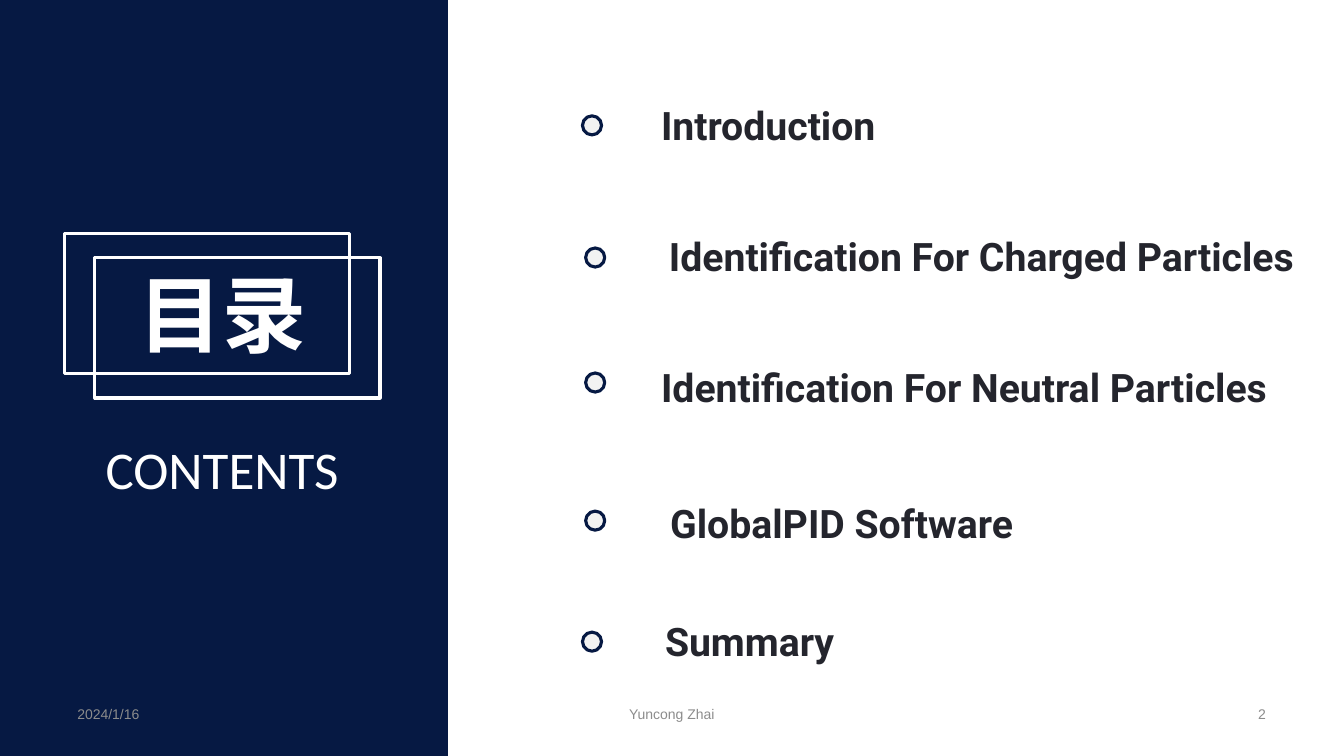
from dataclasses import dataclass

from lxml.etree import SubElement
from pptx import Presentation
from pptx.dml.color import RGBColor
from pptx.enum.shapes import MSO_SHAPE
from pptx.enum.text import MSO_ANCHOR, PP_ALIGN
from pptx.oxml.ns import qn
from pptx.shapes.autoshape import Shape
from pptx.slide import Slide
from pptx.util import Cm, Pt

COLORS = {
    "navy": "061943",
    "white": "FFFFFF",
    "dot": "F2F2F2",
    "topic": "24252D",
    "footer": "8C8C8C",
}
DOT_SIZE = 0.48
FRAME_SIZE = (7.19, 3.53)
FOOTER_TOP, FOOTER_HEIGHT = 17.55, 0.89


@dataclass(frozen=True)
class Box:
    left: float
    top: float
    width: float
    height: float

    def lengths(self) -> tuple[Cm, Cm, Cm, Cm]:
        return Cm(self.left), Cm(self.top), Cm(self.width), Cm(self.height)


@dataclass(frozen=True)
class Style:
    font: str
    size: float
    color: str
    bold: bool = False
    anchor: MSO_ANCHOR = MSO_ANCHOR.TOP


@dataclass(frozen=True)
class Label:
    text: str
    box: Box
    style: Style
    align: PP_ALIGN = PP_ALIGN.LEFT


@dataclass(frozen=True)
class Topic:
    label: Label
    dot_left: float
    dot_top: float


HEADING = Style("Noto Sans CJK SC", 60, "white", bold=True)
SUBHEADING = Style("Calibri", 37.9, "white")
TOPIC = Style("Roboto", 28, "topic", bold=True)
FOOTER = Style("Arial", 10, "footer", anchor=MSO_ANCHOR.MIDDLE)

PANEL = Box(-0.03, -0.03, 11.28, 19.2)
FRAMES = [Box(1.63, 5.89, *FRAME_SIZE), Box(2.39, 6.5, *FRAME_SIZE)]

TITLES = [
    Label("CONTENTS", Box(1.32, 10.87, 8.56, 1.88), SUBHEADING, PP_ALIGN.CENTER),
    Label("目录", Box(3.02, 6.5, 5.18, 2.82), HEADING, PP_ALIGN.CENTER),
]
TOPICS = [
    Topic(Label("Introduction", Box(16.41, 2.44, 11.63, 1.45), TOPIC), 14.68, 2.92),
    Topic(
        Label(
            "Identification For Charged Particles ",
            Box(16.23, 5.74, 17.25, 2.49),
            TOPIC,
            PP_ALIGN.CENTER,
        ),
        14.76,
        6.25,
    ),
    Topic(
        Label("Identification For Neutral Particles", Box(16.41, 9.02, 17.3, 1.45), TOPIC),
        14.76,
        9.4,
    ),
    Topic(Label("GlobalPID Software", Box(16.64, 12.45, 11.96, 1.45), TOPIC), 14.76, 12.88),
    Topic(Label("Summary", Box(16.51, 15.42, 11.96, 1.45), TOPIC), 14.68, 15.93),
]
FOOTERS = [
    Label("2024/1/16", Box(1.7, FOOTER_TOP, 7.49, FOOTER_HEIGHT), FOOTER),
    Label("Yuncong Zhai", Box(11.43, FOOTER_TOP, 11, FOOTER_HEIGHT), FOOTER, PP_ALIGN.CENTER),
    Label("2", Box(24.66, FOOTER_TOP, 7.49, FOOTER_HEIGHT), FOOTER, PP_ALIGN.RIGHT),
]


def color(name: str) -> RGBColor:
    return RGBColor.from_string(COLORS[name])


def add_outlined(
    slide: Slide, kind: MSO_SHAPE, box: Box, line: str, fill: str | None = None
) -> Shape:
    shape = slide.shapes.add_shape(kind, *box.lengths())
    shape.shadow.inherit = False
    if fill is None:
        shape.fill.background()
    else:
        shape.fill.solid()
        shape.fill.fore_color.rgb = color(fill)
    shape.line.color.rgb = color(line)
    shape.line.width = Pt(2.25)
    return shape


def add_label(slide: Slide, label: Label) -> None:
    style = label.style
    frame = slide.shapes.add_textbox(*label.box.lengths()).text_frame
    frame.word_wrap = True
    frame.vertical_anchor = style.anchor
    paragraph = frame.paragraphs[0]
    paragraph.alignment = label.align
    run = paragraph.add_run()
    run.text = label.text
    run.font.name = style.font
    run.font.size = Pt(style.size)
    run.font.bold = style.bold
    run.font.color.rgb = color(style.color)
    # Chinese characters take their typeface from the East Asian font.
    SubElement(run.font._element, qn("a:ea"), typeface=style.font)


def add_topic(slide: Slide, topic: Topic) -> None:
    """Add a topic's ring marker and its text."""
    dot = Box(topic.dot_left, topic.dot_top, DOT_SIZE, DOT_SIZE)
    add_outlined(slide, MSO_SHAPE.OVAL, dot, "navy", "dot")
    add_label(slide, topic.label)


def main() -> None:
    presentation = Presentation()
    presentation.slide_width = Cm(33.87)
    presentation.slide_height = Cm(19.05)
    slide = presentation.slides.add_slide(presentation.slide_layouts[6])

    add_outlined(slide, MSO_SHAPE.RECTANGLE, PANEL, "navy", "navy")
    for frame in FRAMES:
        add_outlined(slide, MSO_SHAPE.RECTANGLE, frame, "white")
    for label in TITLES + FOOTERS:
        add_label(slide, label)
    for topic in TOPICS:
        add_topic(slide, topic)

    presentation.save("out.pptx")


if __name__ == "__main__":
    main()
